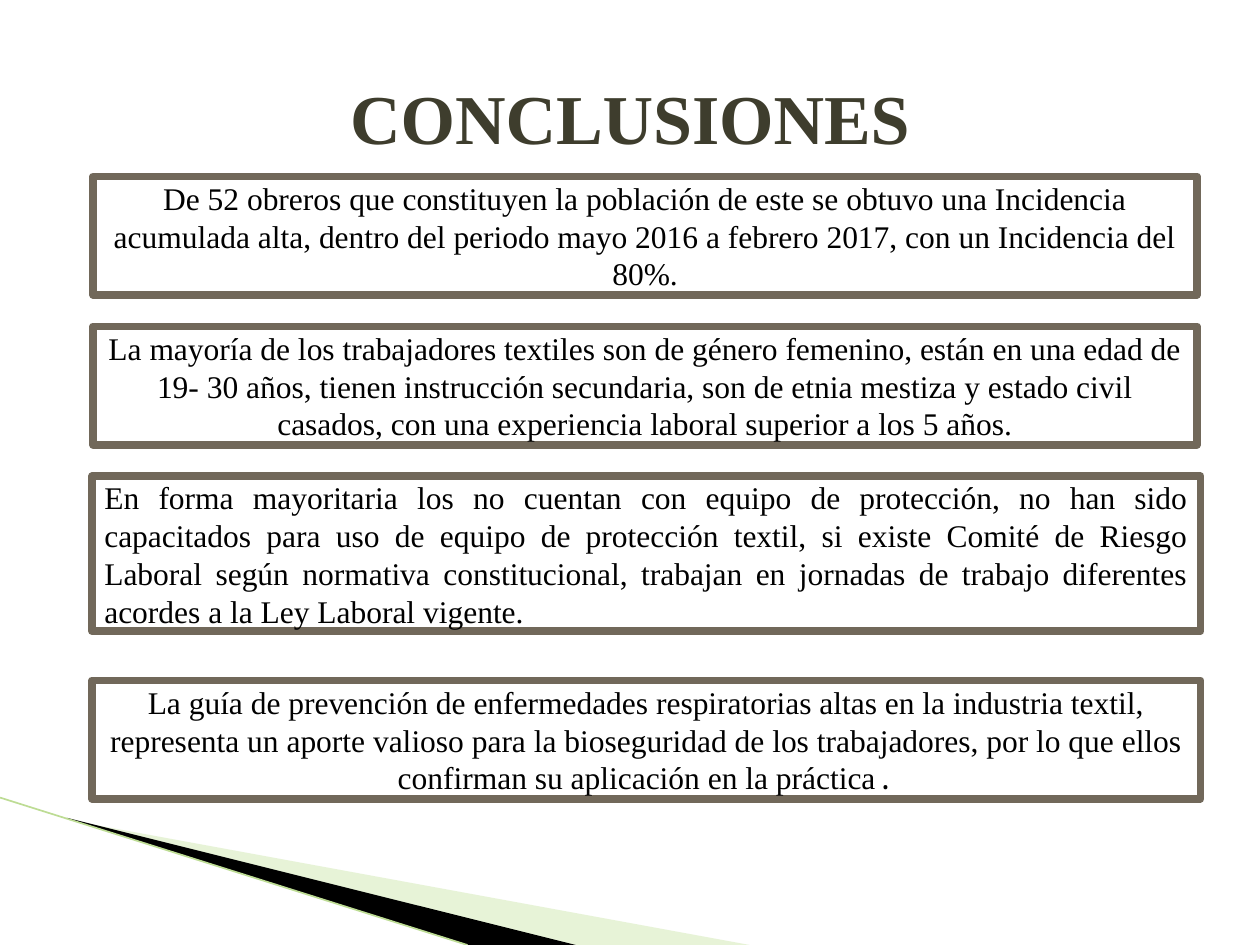
from dataclasses import dataclass

from lxml import etree
from pptx import Presentation
from pptx.dml.color import RGBColor
from pptx.enum.shapes import MSO_CONNECTOR, MSO_SHAPE
from pptx.enum.text import MSO_ANCHOR, PP_ALIGN
from pptx.oxml.ns import qn
from pptx.util import Inches, Pt

CENTER = PP_ALIGN.CENTER
JUSTIFY = PP_ALIGN.JUSTIFY
MIDDLE = MSO_ANCHOR.MIDDLE
RECTANGLE = MSO_SHAPE.RECTANGLE
STRAIGHT = MSO_CONNECTOR.STRAIGHT
BODY_FONT = "Times New Roman"
STOP_FONT = "Noto Sans Mono"


@dataclass
class Conclusion:
    left: float
    top: float
    width: float
    height: float
    text: str
    stop: str = ""
    alignment: PP_ALIGN = CENTER


@dataclass
class Wedge:
    points: list[tuple[float, float]]
    color: str
    opacity: int = 100


CONCLUSIONS = [
    Conclusion(0.74, 1.4, 8.76, 0.94,
               "De 52 obreros que constituyen la población de este se obtuvo una "
               "Incidencia acumulada alta, dentro del periodo mayo 2016 a febrero "
               "2017, con un Incidencia del 80%."),
    Conclusion(0.74, 2.59, 8.76, 0.94,
               "La mayoría de los trabajadores textiles son de género femenino, "
               "están en una edad de 19- 30 años, tienen instrucción secundaria, "
               "son de etnia mestiza y estado civil casados, con una experiencia "
               "laboral superior a los 5 años."),
    Conclusion(0.73, 3.78, 8.8, 1.23,
               "En forma mayoritaria los no cuentan con equipo de protección, no "
               "han sido capacitados para uso de equipo de protección textil, si "
               "existe Comité de Riesgo Laboral según normativa constitucional, "
               "trabajan en jornadas de trabajo diferentes acordes a la Ley "
               "Laboral vigente.", alignment=JUSTIFY),
    Conclusion(0.73, 5.4, 8.8, 0.94,
               "La guía de prevención de enfermedades respiratorias altas en la "
               "industria textil, representa un aporte valioso para la "
               "bioseguridad de los trabajadores, por lo que ellos confirman su "
               "aplicación en la práctica", stop="."),
]

WEDGES = [
    Wedge([(0.55, 6.51), (5.95, 7.5), (4.56, 7.5), (0.55, 6.5)], "C3E19D", 40),
    Wedge([(0.53, 6.49), (4.57, 7.5), (3.72, 7.5), (0.54, 6.5)], "000000"),
]


def color(value: str) -> RGBColor:
    return RGBColor.from_string(value)


def add_run(paragraph, text: str, size: float, hex_color: str,
            font: str = BODY_FONT, bold: bool = False) -> None:
    run = paragraph.add_run()
    run.text = text
    run.font.name = font
    run.font.size = Pt(size)
    run.font.bold = bold
    run.font.color.rgb = color(hex_color)


def add_wedge(slide, wedge: Wedge) -> None:
    start, *others = [(Inches(x), Inches(y)) for x, y in wedge.points]
    builder = slide.shapes.build_freeform(*start)
    builder.add_line_segments(others, close=True)
    shape = builder.convert_to_shape()
    shape.shadow.inherit = False
    shape.fill.solid()
    shape.fill.fore_color.rgb = color(wedge.color)
    shape.line.fill.background()
    if wedge.opacity < 100:
        fill_color = shape.fill._xPr.find(qn("a:solidFill"))[0]
        alpha = etree.SubElement(fill_color, qn("a:alpha"))
        alpha.set("val", str(wedge.opacity * 1000))


def add_edge_line(slide) -> None:
    line = slide.shapes.add_connector(
        STRAIGHT, Inches(0), Inches(6.33), Inches(3.71), Inches(7.5))
    line.line.color.rgb = color("BDDC94")
    line.line.width = Pt(0.95)
    etree.SubElement(line._element.spPr, qn("a:effectLst"))


def add_conclusion(slide, conclusion: Conclusion) -> None:
    shape = slide.shapes.add_shape(
        RECTANGLE, Inches(conclusion.left), Inches(conclusion.top),
        Inches(conclusion.width), Inches(conclusion.height))
    shape.shadow.inherit = False
    shape.fill.solid()
    shape.fill.fore_color.rgb = color("FFFFFF")
    shape.line.color.rgb = color("71685A")
    shape.line.width = Pt(4.33)
    frame = shape.text_frame
    frame.word_wrap = True
    frame.vertical_anchor = MIDDLE
    paragraph = frame.paragraphs[0]
    paragraph.alignment = conclusion.alignment
    add_run(paragraph, conclusion.text, 18, "000000")
    if conclusion.stop:
        add_run(paragraph, conclusion.stop, 18, "000000", STOP_FONT)


def format_title(slide) -> None:
    title = slide.shapes.title
    title.left, title.top = Inches(0.5), Inches(0.3)
    title.width, title.height = Inches(9), Inches(1.25)
    title.text_frame.vertical_anchor = MIDDLE
    paragraph = title.text_frame.paragraphs[0]
    paragraph.alignment = CENTER
    add_run(paragraph, "CONCLUSIONES", 40, "3E3D2D", bold=True)


def main() -> None:
    presentation = Presentation()
    presentation.slide_width = Inches(10)
    presentation.slide_height = Inches(7.5)
    slide = presentation.slides.add_slide(presentation.slide_layouts[5])
    format_title(slide)
    for wedge in WEDGES:
        add_wedge(slide, wedge)
    add_edge_line(slide)
    for conclusion in CONCLUSIONS:
        add_conclusion(slide, conclusion)
    presentation.save("out.pptx")


if __name__ == "__main__":
    main()
